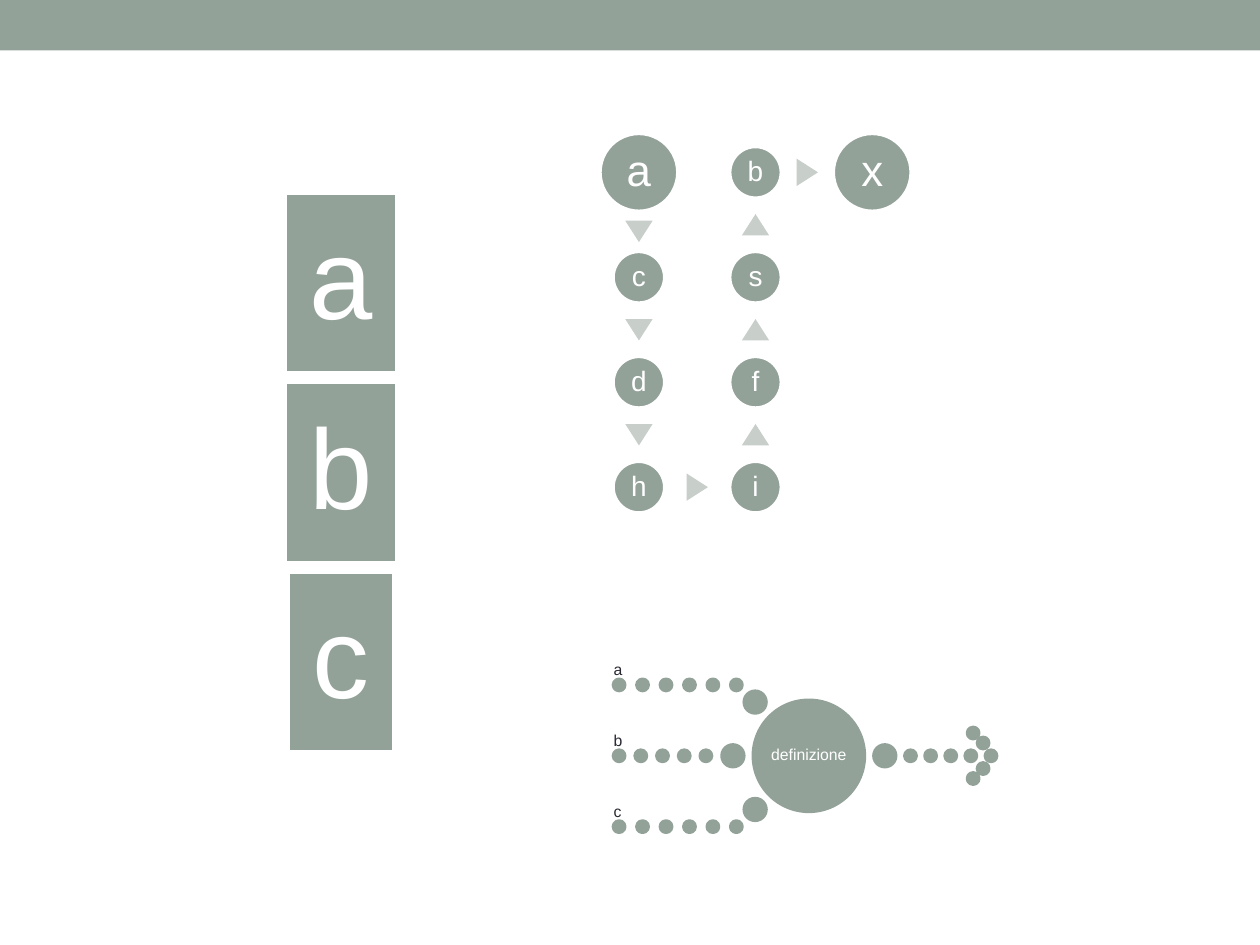
import math
from pptx import Presentation
from pptx.dml.color import RGBColor
from pptx.enum import shapes, text
from pptx.util import Pt

SAGE, PALE, WHITE, INK = "93A299", "C8CECA", "FFFFFF", "292934"
KIND = shapes.MSO_SHAPE
LINE_WIDTH = 2.08


def colour(value):
    return RGBColor.from_string(value)


def write(shape, words, size, hue=WHITE, inset=0, align=text.PP_ALIGN.CENTER,
          anchor=text.MSO_ANCHOR.MIDDLE, wrap=False):
    frame = shape.text_frame
    frame.word_wrap = wrap
    frame.vertical_anchor = anchor
    frame.margin_left = frame.margin_right = Pt(inset)
    frame.margin_top = frame.margin_bottom = Pt(inset)
    para = frame.paragraphs[0]
    para.alignment = align
    para.line_spacing = 0.9
    span = para.add_run()
    span.text = words
    span.font.name = "Arial"
    span.font.size = Pt(size)
    span.font.color.rgb = colour(hue)


def draw(page, kind, x, y, width, height, fill=SAGE, line=None, turn=0):
    """Add a preset shape centred on (x, y)."""
    shape = page.shapes.add_shape(kind, Pt(x - width / 2), Pt(y - height / 2),
                                  Pt(width), Pt(height))
    shape.shadow.inherit = False
    shape.rotation = turn
    shape.fill.solid()
    shape.fill.fore_color.rgb = colour(fill)
    if line:
        shape.line.color.rgb = colour(line)
        shape.line.width = Pt(LINE_WIDTH)
    else:
        shape.line.fill.background()
    return shape


def disc(page, x, y, size, line=SAGE):
    return draw(page, KIND.OVAL, x, y, size, size, line=line)


def header_band(page, left, top, width, height):
    draw(page, KIND.RECTANGLE, left + width / 2, top + height / 2, width, height)


def panel_stack(page, left, top, width, height):
    gap = 5.4
    panel = (height - 2 * gap) / 3
    for row, (letter, breadth) in enumerate(
            [("a", width), ("b", width), ("c", width - 3.6)]):
        shape = draw(page, KIND.RECTANGLE, left + width / 2,
                     top + panel / 2 + row * (panel + gap),
                     breadth, panel, line=WHITE)
        write(shape, letter, 65, inset=13)


def winding_flow(page, left, top, width, height):
    large, small = 44.6, 29.6
    column_gap = (width - large) / 2
    row_gap = (height - large / 2 - small / 2) / 3
    # Letter, column, row, diameter, in reading order of the flow
    steps = [("a", 0, 0, large), ("c", 0, 1, small), ("d", 0, 2, small),
             ("h", 0, 3, small), ("i", 1, 3, small), ("f", 1, 2, small),
             ("s", 1, 1, small), ("b", 1, 0, small), ("x", 2, 0, large)]
    previous = None
    for letter, column, row, size in steps:
        x = left + large / 2 + column * column_gap
        y = top + large / 2 + row * row_gap
        # Arrow halfway between the rims of the two circles
        if previous:
            from_x, from_y, from_size = previous
            distance = math.hypot(x - from_x, y - from_y)
            share = 0.5 + (from_size - size) / 4 / distance
            turn = math.degrees(math.atan2(y - from_y, x - from_x)) + 90
            draw(page, KIND.ISOSCELES_TRIANGLE, from_x + (x - from_x) * share,
                 from_y + (y - from_y) * share, 15.6, 12.2, fill=PALE, turn=turn)
        circle = disc(page, x, y, size, line=WHITE)
        write(circle, letter, 25 if size == large else 16, inset=1.5)
        previous = x, y, size


def dotted_funnel(page, left, top, width, height):
    dot, big_dot, hub = 6.4, 12.4, 63.4
    orbit = 43.4
    row_gap = (height - dot) / 2
    middle = top + height / 2
    hub_x = left + 111.6
    first, tip = left + dot / 2, left + width - dot / 2

    # Inputs: label, dotted line and a big dot beside the hub
    for label, row, count, pitch in [("a", -1, 6, 13.4), ("b", 0, 5, 12.4),
                                     ("c", 1, 6, 13.4)]:
        y = middle + row * row_gap
        for index in range(count):
            disc(page, first + index * pitch, y, dot)
        angle = math.radians(45 * row)
        disc(page, hub_x - orbit * math.cos(angle),
             middle + orbit * math.sin(angle), big_dot)
        box = page.shapes.add_textbox(Pt(left), Pt(y - dot / 2 - 16), Pt(73), Pt(16))
        write(box, label, 9, INK, align=text.PP_ALIGN.LEFT,
              anchor=text.MSO_ANCHOR.BOTTOM, wrap=True)

    # Hub
    write(disc(page, hub_x, middle, hub), "definizione", 9, inset=0.7)

    # Output: big dot, dotted line and arrowhead of dots
    disc(page, hub_x + orbit, middle, big_dot)
    for index in range(5):
        disc(page, tip - index * 11.5, middle, dot)
    for back, rise in [(4.5, 7.3), (10.2, 13)]:
        for side in (-1, 1):
            disc(page, tip - back, middle + side * rise, dot)


def main():
    deck = Presentation()
    deck.slide_width, deck.slide_height = Pt(720), Pt(540)
    page = deck.slides.add_slide(deck.slide_layouts[6])
    header_band(page, 0, 0, 720, 28.8)
    panel_stack(page, 162.7, 110.2, 64, 319.6)
    winding_flow(page, 342.8, 76.2, 177.9, 217)
    dotted_funnel(page, 350.6, 388.2, 218.9, 87.4)
    deck.save("out.pptx")


if __name__ == "__main__":
    main()
